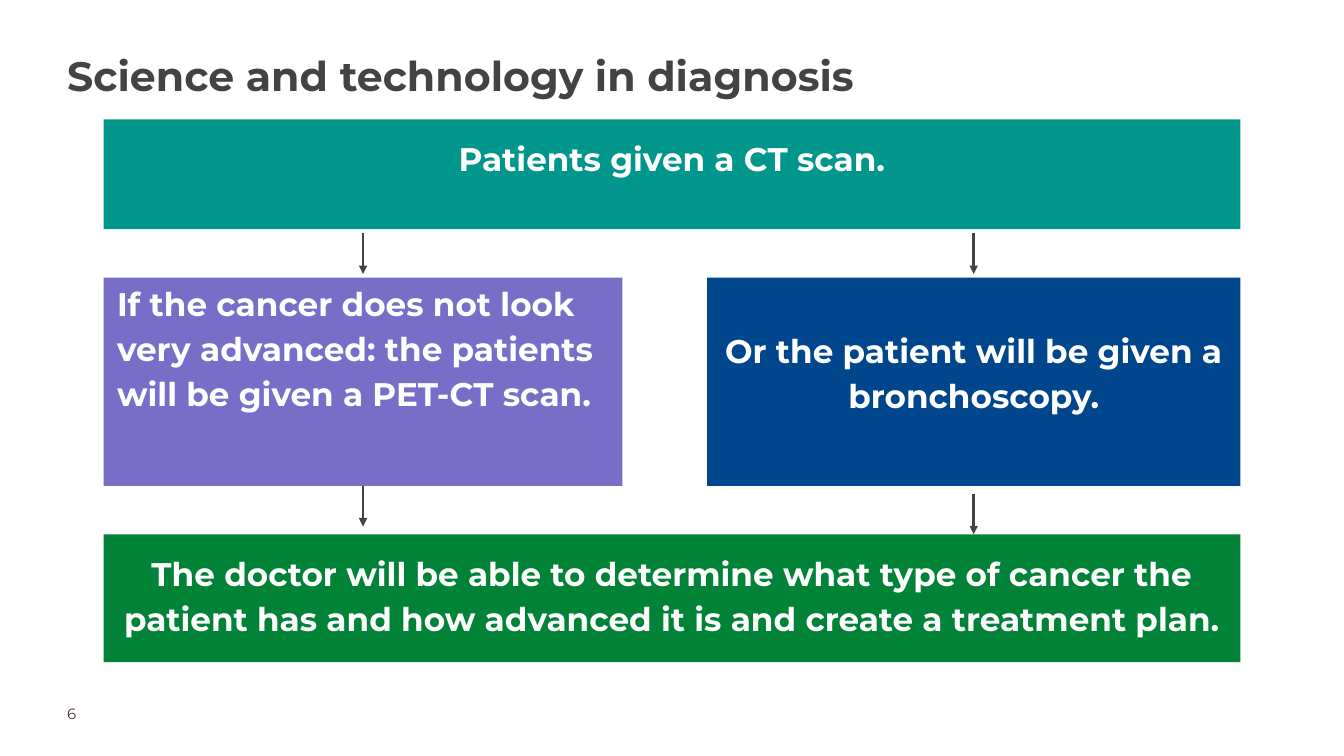
"""Build a slide showing the diagnosis pathway as a flow chart."""
from lxml.etree import SubElement
from pptx import Presentation
from pptx.dml.color import RGBColor
from pptx.enum.shapes import MSO_CONNECTOR, MSO_SHAPE
from pptx.enum.text import MSO_ANCHOR, PP_ALIGN
from pptx.oxml.ns import qn
from pptx.util import Pt

COLORS = {
    "title": "434343", "number": "4B3241", "white": "FFFFFF", "arrow": "434343",
    "scan": "00968C", "pet": "786EC8", "bronchoscopy": "00468C", "plan": "008237",
}
FONT = "Montserrat"
TITLE = "Science and technology in diagnosis"
PAGE_NUMBER = "6"

LEFT, RIGHT, PET_RIGHT, BRONCHOSCOPY_LEFT = 111, 1329, 667, 757.5
ROWS = {"top": (128, 117.5), "middle": (297.5, 223), "bottom": (572.5, 137)}
INSET = 14.4
STEPS = [
    ("scan", "top", LEFT, RIGHT, INSET, PP_ALIGN.CENTER, "Patients given a CT scan."),
    ("bronchoscopy", "middle", BRONCHOSCOPY_LEFT, RIGHT, 51, PP_ALIGN.CENTER,
     "Or the patient will be given a bronchoscopy."),
    ("plan", "bottom", LEFT, RIGHT, INSET, PP_ALIGN.CENTER,
     "The doctor will be able to determine what type of cancer the patient has "
     "and how advanced it is and create a treatment plan."),
    ("pet", "middle", LEFT, PET_RIGHT, 0, PP_ALIGN.LEFT,
     "If the cancer does not look very advanced: the patients will be given a PET-CT scan."),
]
ARROW_LENGTH = 43.5
PET_CENTER = (LEFT + PET_RIGHT) / 2
BRONCHOSCOPY_CENTER = (BRONCHOSCOPY_LEFT + RIGHT) / 2
ARROWS = [
    (PET_CENTER, 250, None),
    (PET_CENTER, 520.5, "pet"),
    (BRONCHOSCOPY_CENTER, 250, None),
    (BRONCHOSCOPY_CENTER, 529, None),
]


def write(shape, text, size, color, bold=True, align=PP_ALIGN.LEFT, spacing=1.15,
          side=0, top=0):
    frame = shape.text_frame
    frame.word_wrap = True
    frame.vertical_anchor = MSO_ANCHOR.TOP
    frame.margin_left = frame.margin_right = frame.margin_bottom = Pt(side)
    frame.margin_top = Pt(top)
    frame.text = text
    para = frame.paragraphs[0]
    para.alignment = align
    para.line_spacing = spacing
    para.space_before = Pt(0)
    para.font.name = FONT
    para.font.size = Pt(size)
    para.font.bold = bold
    para.font.color.rgb = RGBColor.from_string(COLORS[color])


def add_step(page, name, row, left, right, top_inset, align, text):
    top, height = ROWS[row]
    box = page.shapes.add_shape(
        MSO_SHAPE.RECTANGLE, Pt(left), Pt(top), Pt(right - left), Pt(height))
    box.shadow.inherit = False
    box.fill.solid()
    box.fill.fore_color.rgb = RGBColor.from_string(COLORS[name])
    box.line.fill.background()
    write(box, text, 35, "white", align=align, side=INSET, top=top_inset)
    return box


def add_arrow(page, x, top, source):
    arrow = page.shapes.add_connector(
        MSO_CONNECTOR.STRAIGHT, Pt(x), Pt(top), Pt(x), Pt(top + ARROW_LENGTH))
    if source is not None:
        arrow.begin_connect(source, 2)
    arrow.line.width = Pt(3)
    arrow.line.color.rgb = RGBColor.from_string(COLORS["arrow"])
    SubElement(arrow.line._get_or_add_ln(), qn("a:tailEnd"), type="triangle")
    SubElement(arrow._element.spPr, qn("a:effectLst"))


def main():
    deck = Presentation()
    deck.slide_width, deck.slide_height = Pt(1440), Pt(810)
    page = deck.slides.add_slide(deck.slide_layouts[5])

    title = page.shapes.title
    title.left, title.top, title.width, title.height = Pt(72), Pt(46), Pt(1295), Pt(128)
    write(title, TITLE, 44, "title")
    number = page.shapes.add_textbox(Pt(72), Pt(754.5), Pt(113), Pt(28))
    write(number, PAGE_NUMBER, 16, "number", bold=False, spacing=1)

    boxes = {step[0]: add_step(page, *step) for step in STEPS}
    for x, top, source in ARROWS:
        add_arrow(page, x, top, boxes.get(source))

    deck.save("out.pptx")


if __name__ == "__main__":
    main()
